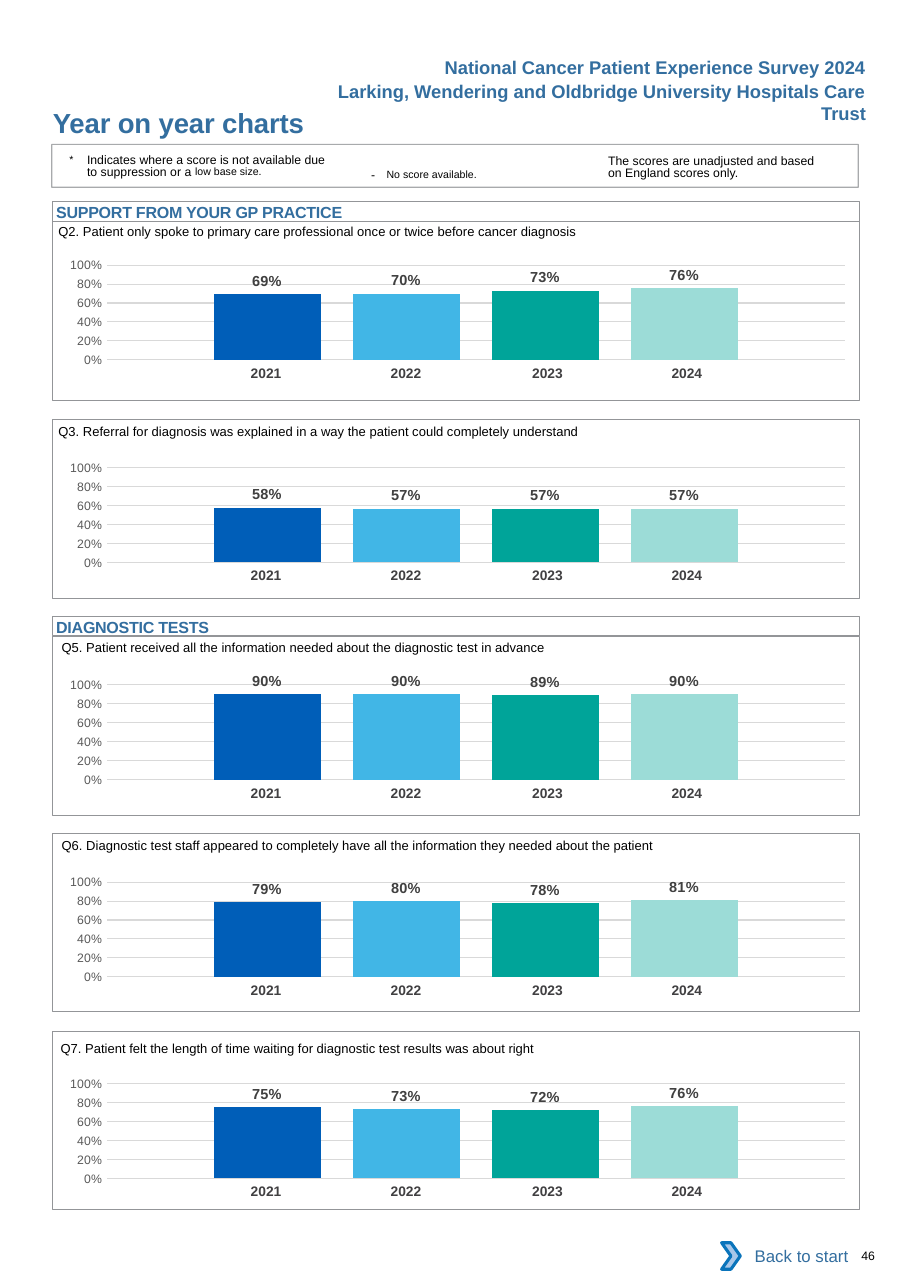
from lxml import etree
from pptx import Presentation
from pptx.chart import data as chart_data
from pptx.dml.color import RGBColor
from pptx.enum import chart as chart_enum, shapes, text
from pptx.oxml import ns
from pptx.util import Inches, Pt

COLOURS = {
    "heading": "336E9F", "black": "000000", "white": "FFFFFF", "frame": "939598",
    "year": "414042", "label": "404040", "axis": "595959", "grid": "D9D9D9",
    "chevron": "A8C7E9", "chevron_line": "0A74BB",
}
SCORES = [("2021", "005EB8", 1.27), ("2022", "41B6E6", 1.27),
          ("2023", "00A499", 1.34), ("2024", "9CDCD7", 1.27)]
YEAR_MARGINS = [0, 0, 0.04, 0.12]
PLOT_AREA = {"x": 0.079, "y": 0.145, "w": 0.915, "h": 0.666}
PANEL_LEFT, PANEL_WIDTH = 0.48, 7.32

SECTIONS = [("SUPPORT FROM YOUR GP PRACTICE", 1.83), ("DIAGNOSTIC TESTS", 5.59)]
QUESTIONS = [
    ("Q2. Patient only spoke to primary care professional once or twice before cancer diagnosis",
     (0.53, 1.94), 2.01, 2.22, (0.69, 0.70, 0.73, 0.76)),
    ("Q3. Referral for diagnosis was explained in a way the patient could completely understand",
     (0.53, 3.75), 3.81, 4.06, (0.58, 0.57, 0.57, 0.57)),
    ("Q5. Patient received all the information needed about the diagnostic test in advance",
     (0.56, 5.71), 5.78, 6.03, (0.90, 0.90, 0.89, 0.90)),
    ("Q6. Diagnostic test staff appeared to completely have all the information they needed about the patient",
     (0.56, 7.51), 7.56, 7.82, (0.79, 0.80, 0.78, 0.81)),
    ("Q7. Patient felt the length of time waiting for diagnostic test results was about right",
     (0.55, 9.35), 9.36, 9.65, (0.75, 0.73, 0.72, 0.76)),
]


def colour(name):
    return RGBColor.from_string(COLOURS.get(name, name))


def style_font(font, size, name="black", bold=False):
    font.name, font.size, font.bold = "Arial", Pt(size), bold
    font.color.rgb = colour(name)


def set_margins(target, left, top, right=0, bottom=0):
    target.margin_left, target.margin_top = Inches(left), Inches(top)
    target.margin_right, target.margin_bottom = Inches(right), Inches(bottom)


def write(shape, content, size, name="black", bold=False, margins=(0, 0), align=None, spacing=0):
    """Put one styled paragraph into a shape or cell and return it."""
    frame = shape.text_frame
    paragraph = frame.paragraphs[0]
    paragraph.text = content
    paragraph.alignment = align
    for run in paragraph.runs:
        style_font(run.font, size, name, bold)
        if spacing:
            run.font._element.set("spc", str(spacing))
    set_margins(frame, *margins)
    return paragraph


def add_text(slide, box, content, size, wrap=True, **style):
    shape = slide.shapes.add_textbox(*map(Inches, box))
    shape.text_frame.word_wrap = wrap
    return write(shape, content, size, **style)


def add_raised_run(paragraph, content, baseline):
    run = paragraph.add_run()
    run.text = content
    style_font(run.font, 12)
    run.font._element.set("baseline", str(baseline))


def add_preset(slide, box, kind=shapes.MSO_SHAPE.RECTANGLE, fill=None, line="frame", weight=0.5):
    shape = slide.shapes.add_shape(kind, *map(Inches, box))
    shape.shadow.inherit = False
    if fill:
        shape.fill.solid()
        shape.fill.fore_color.rgb = colour(fill)
    else:
        shape.fill.background()
    if line:
        shape.line.color.rgb = colour(line)
        shape.line.width = Pt(weight)
    else:
        shape.line.fill.background()
    return shape


def fix_plot_area(chart):
    area = chart._chartSpace.find(".//" + ns.qn("c:plotArea"))
    for old in area.findall(ns.qn("c:layout")):
        area.remove(old)
    layout = etree.Element(ns.qn("c:layout"))
    manual = etree.SubElement(layout, ns.qn("c:manualLayout"))
    settings = {"layoutTarget": "inner", "xMode": "edge", "yMode": "edge", **PLOT_AREA}
    for tag, value in settings.items():
        etree.SubElement(manual, ns.qn("c:" + tag)).set("val", str(value))
    area.insert(0, layout)


def add_score_chart(slide, top, values):
    data = chart_data.CategoryChartData(number_format="0%")
    data.categories = ["1"]
    for number, value in enumerate(values, 1):
        data.add_series(f"Series {number}", [value])
    box = map(Inches, (0.39, top, 7.32, 1.29))
    chart = slide.shapes.add_chart(chart_enum.XL_CHART_TYPE.COLUMN_CLUSTERED, *box, data).chart
    chart.has_legend = chart.has_title = False
    chart.font.name, chart.font.size = "Calibri", Pt(10)
    chart.font.color.rgb = colour("black")
    plot = chart.plots[0]
    plot.gap_width, plot.overlap, plot.vary_by_categories = 200, -30, False
    for series, (_, fill, _) in zip(plot.series, SCORES):
        series.format.fill.solid()
        series.format.fill.fore_color.rgb = colour(fill)
        labels = series.data_labels
        labels.show_value = True
        labels.position = chart_enum.XL_LABEL_POSITION.OUTSIDE_END
        labels.number_format, labels.number_format_is_linked = "0%", False
        style_font(labels.font, 9.5, "label", True)
    chart.category_axis.visible = False
    axis = chart.value_axis
    axis.minimum_scale, axis.maximum_scale, axis.major_unit = 0, 1, 0.2
    axis.major_tick_mark = axis.minor_tick_mark = chart_enum.XL_TICK_MARK.NONE
    axis.format.line.fill.background()
    axis.major_gridlines.format.line.color.rgb = colour("grid")
    axis.major_gridlines.format.line.width = Pt(0.75)
    axis.tick_labels.number_format, axis.tick_labels.number_format_is_linked = "0%", False
    style_font(axis.tick_labels.font, 8, "axis")
    fix_plot_area(chart)


def add_year_table(slide, top):
    box = map(Inches, (1.73, top, 5.15, 0.27))
    table = slide.shapes.add_table(1, len(SCORES), *box).table
    table.first_row = table.horz_banding = False
    style = table._tbl.tblPr.find(ns.qn("a:tableStyleId"))
    style.text = "{2D5ABB26-0587-4C30-8999-92F81FD0307C}"
    for index, (year, _, width) in enumerate(SCORES):
        table.columns[index].width = Inches(width)
        cell = table.cell(0, index)
        cell.fill.background()
        write(cell, year, 9, "year", True, align=text.PP_ALIGN.CENTER)
        set_margins(cell, 0.1, 0.05, YEAR_MARGINS[index], 0.05)


def add_header(slide):
    lines = [("National Cancer Patient Experience Survey 2024", 3.92, 0.46),
             ("Larking, Wendering and Oldbridge University Hospitals Care Trust", 2.56, 0.68)]
    for content, left, top in lines:
        add_text(slide, (left, top, 7.96 - left, 0.3), content, 12, wrap=False, name="heading",
                 bold=True, margins=(0.1, 0.05, 0.1, 0.05), align=text.PP_ALIGN.RIGHT)
    add_text(slide, (0.48, 0.96, 4.5, 0.3), "Year on year charts", 18, name="heading",
             bold=True, spacing=-10)


def add_key(slide):
    scores = add_text(slide, (5.52, 1.38, 2.01, 0.27),
                      "The scores are unadjusted and based on England scores only.", 8,
                      margins=(0, 0.03))
    missing = add_text(slide, (3.27, 1.41, 1.83, 0.24), "- ", 8, margins=(0.1, 0.05), spacing=260)
    add_raised_run(missing, "No score available.", 3000)
    hidden = add_text(slide, (0.63, 1.38, 2.38, 0.27), "", 8, margins=(0, 0.03))
    add_raised_run(hidden, "*\t", 3000)
    run = hidden.add_run()
    run.text = "Indicates where a score is not available due to suppression or a "
    style_font(run.font, 8)
    add_raised_run(hidden, "low base size.", 7000)
    properties = hidden._p.get_or_add_pPr()
    properties.set("marL", str(Inches(0.16)))
    properties.set("indent", str(-Inches(0.16)))
    for paragraph in (scores, hidden):
        paragraph.line_spacing = Pt(8.1)
    frame = add_preset(slide, (0.47, 1.31, PANEL_WIDTH, 0.39), weight=0.75)
    line_colour = frame._element.spPr.find(".//" + ns.qn("a:srgbClr"))
    etree.SubElement(line_colour, ns.qn("a:alpha")).set("val", "80000")


def add_section(slide, title, top):
    bar = add_preset(slide, (PANEL_LEFT, top, PANEL_WIDTH, 0.18))
    bar.text_frame.vertical_anchor = text.MSO_ANCHOR.TOP
    write(bar, title, 10.5, "heading", True, margins=(0.03, 0.01),
          align=text.PP_ALIGN.LEFT, spacing=-15)


def add_question(slide, question, place, panel_top, chart_top, values):
    add_text(slide, (*place, 7.2, 0.24), question, 8.5, margins=(0, 0.09))
    add_score_chart(slide, chart_top, values)
    add_year_table(slide, chart_top + 1.05)
    add_preset(slide, (PANEL_LEFT, panel_top, PANEL_WIDTH, 1.62))


def add_footer(slide):
    button = add_preset(slide, (6.62, 11.19, 1.18, 0.42), fill="white", line=None)
    button.text_frame.vertical_anchor = text.MSO_ANCHOR.MIDDLE
    write(button, "Back to start", 11, "heading", margins=(0.1, 0.05, 0.1, 0.05),
          align=text.PP_ALIGN.RIGHT)
    add_preset(slide, (6.55, 11.28, 0.17, 0.24), shapes.MSO_SHAPE.CHEVRON,
               "chevron", "chevron_line", 2)
    add_text(slide, (7.72, 11.33, 0.51, 0.13), "46", 8, margins=(0.1, 0))


def main():
    presentation = Presentation()
    presentation.slide_width, presentation.slide_height = Inches(8.26), Inches(11.69)
    slide = presentation.slides.add_slide(presentation.slide_layouts[6])
    add_header(slide)
    add_key(slide)
    for section in SECTIONS:
        add_section(slide, *section)
    for question in QUESTIONS:
        add_question(slide, *question)
    add_footer(slide)
    presentation.save("out.pptx")


if __name__ == "__main__":
    main()
